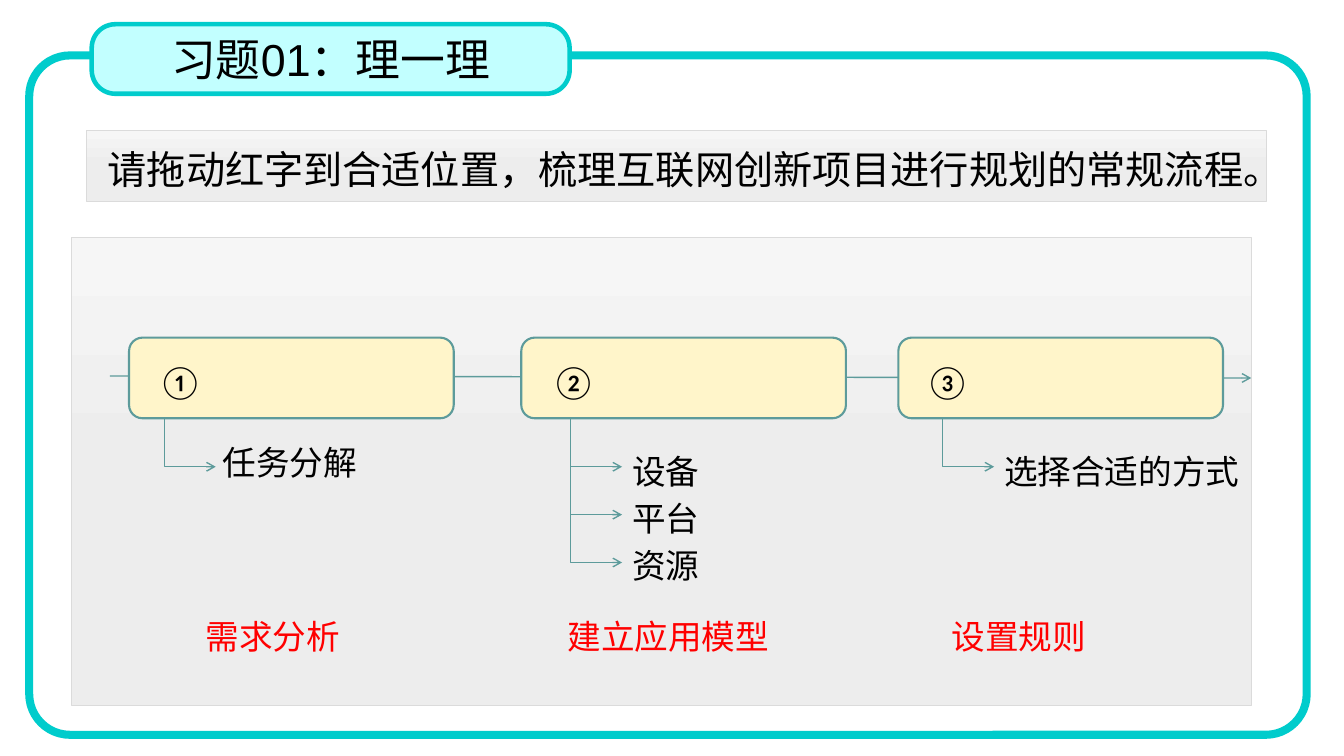
import copy
from dataclasses import dataclass

import lxml.etree
import pptx
import pptx.dml.color
import pptx.enum.shapes
import pptx.enum.text
import pptx.oxml.ns
import pptx.util

Inches = pptx.util.Inches
Shapes = pptx.enum.shapes.MSO_SHAPE
Connectors = pptx.enum.shapes.MSO_CONNECTOR
qn = pptx.oxml.ns.qn


@dataclass(frozen=True)
class Theme:
    """Colours, fonts and type sizes of the slide."""
    frame: str = "00CCCC"
    title_fill: str = "C2FFFF"
    step_fill: str = "FFF5CA"
    flow: str = "5D9B9B"
    panel_line: str = "DBDBDB"
    panel_stops: tuple = ("F6F6F6", "EDEDED", "EBEBEB")
    text: str = "000000"
    answer: str = "FF0000"
    title_font: str = "Arial"
    body_font: str = "Noto Sans CJK SC"
    answer_font: str = "Calibri"
    title_size: int = 32
    prompt_size: int = 28
    label_size: int = 24


THEME = Theme()


def rgb(value):
    """Return a colour from its hex digits."""
    return pptx.dml.color.RGBColor.from_string(value)


def style_paragraph(paragraph, font_name, size, color):
    """Set the font of a whole paragraph."""
    paragraph.font.name = font_name
    paragraph.font.size = pptx.util.Pt(size)
    paragraph.font.color.rgb = rgb(color)


def add_box(slide, kind, box, line_color, line_width, fill_color=None):
    """Add an outlined preset shape, filled if a colour is given."""
    shape = slide.shapes.add_shape(kind, *map(Inches, box))
    shape.shadow.inherit = False
    shape.line.color.rgb = rgb(line_color)
    shape.line.width = pptx.util.Pt(line_width)
    if fill_color:
        shape.fill.solid()
        shape.fill.fore_color.rgb = rgb(fill_color)
    else:
        shape.fill.background()
    return shape


def add_panel(slide, box):
    """Add a grey panel with a top-down gradient."""
    panel = add_box(slide, Shapes.RECTANGLE, box, THEME.panel_line, 0.5)
    panel.fill.gradient()
    panel.fill.gradient_angle = 270
    stop_list = panel._element.spPr.find(".//" + qn("a:gsLst"))
    stop_list.append(copy.deepcopy(stop_list[-1]))
    stops = panel.fill.gradient_stops
    for stop, color, position in zip(stops, THEME.panel_stops, (0, 0.5, 1)):
        stop.color.rgb = rgb(color)
        stop.position = position


def add_label(slide, text, box, font_name, color=THEME.text, size=THEME.label_size):
    """Add a wrapped text box with one widely spaced line."""
    label = slide.shapes.add_textbox(*map(Inches, box))
    frame = label.text_frame
    frame.word_wrap = True
    frame.auto_size = pptx.enum.text.MSO_AUTO_SIZE.SHAPE_TO_FIT_TEXT
    paragraph = frame.paragraphs[0]
    paragraph.text = text
    paragraph.line_spacing = 1.5
    style_paragraph(paragraph, font_name, size, color)


def add_arrow(slide, kind, start, end):
    """Add a thin connector with an open arrowhead at its end."""
    arrow = slide.shapes.add_connector(kind, *map(Inches, start + end))
    arrow.line.color.rgb = rgb(THEME.flow)
    arrow.line.width = pptx.util.Pt(1)
    properties = arrow._element.spPr
    line = properties.find(qn("a:ln"))
    lxml.etree.SubElement(line, qn("a:tailEnd"), type="arrow")
    lxml.etree.SubElement(properties, qn("a:effectLst"))
    return arrow


def add_branch(slide, left, top):
    """Add an arrow that runs down and then turns right."""
    width, height = 0.49, 0.51
    branch = add_arrow(slide, Connectors.ELBOW, (left, top + height), (left + width, top))
    properties = branch._element.spPr
    properties.find(qn("a:xfrm")).set("rot", "5400000")
    properties.find(qn("a:prstGeom")).set("prst", "bentConnector2")


def add_title(slide, text):
    """Add the outer frame and the title tab on its top edge."""
    frame = add_box(slide, Shapes.ROUNDED_RECTANGLE, (0.29, 0.55, 12.67, 6.74),
                    THEME.frame, 5.75)
    frame.adjustments[0] = 0.06
    tab = add_box(slide, Shapes.ROUNDED_RECTANGLE, (0.91, 0.24, 4.74, 0.69),
                  THEME.frame, 3.25, THEME.title_fill)
    tab.adjustments[0] = 0.34
    tab.text_frame.vertical_anchor = pptx.enum.text.MSO_ANCHOR.MIDDLE
    paragraph = tab.text_frame.paragraphs[0]
    paragraph.text = text
    paragraph.alignment = pptx.enum.text.PP_ALIGN.CENTER
    style_paragraph(paragraph, THEME.title_font, THEME.title_size, THEME.text)


def add_step(slide, left, number, number_left, branch_left, details):
    """Add one step box with its number, branches and details."""
    add_box(slide, Shapes.FLOWCHART_ALTERNATE_PROCESS, (left, 3.35, 3.22, 0.8),
            THEME.flow, 1.5, THEME.step_fill)
    add_label(slide, number, (number_left, 3.33, 2.11, 0.71), THEME.answer_font)
    for index, (text, text_left, text_top, width) in enumerate(details):
        add_branch(slide, branch_left, 4.13 + 0.475 * index)
        add_label(slide, text, (text_left, text_top, width, 0.71), THEME.body_font)


def main():
    """Build the slide and save it."""
    presentation = pptx.Presentation()
    presentation.slide_width = Inches(13.33)
    presentation.slide_height = Inches(7.5)
    slide = presentation.slides.add_slide(presentation.slide_layouts[6])

    add_panel(slide, (0.71, 2.36, 11.7, 4.64))
    add_arrow(slide, Connectors.STRAIGHT, (1.09, 3.73), (12.41, 3.75))
    add_panel(slide, (0.86, 1.29, 11.7, 0.71))
    add_title(slide, "习题01：理一理")
    add_label(slide, "请拖动红字到合适位置，梳理互联网创新项目进行规划的常规流程。",
              (0.97, 1.16, 11.59, 0.81), THEME.body_font, size=THEME.prompt_size)

    resources = [(text, 6.17, 4.22 + 0.47 * index, 2.11)
                 for index, text in enumerate(("设备", "平台", "资源"))]
    add_step(slide, 1.28, "①", 1.47, 1.64, [("任务分解", 2.11, 4.13, 2.11)])
    add_step(slide, 5.17, "②", 5.37, 5.67, resources)
    add_step(slide, 8.91, "③", 9.08, 9.36, [("选择合适的方式", 9.86, 4.22, 3.22)])

    answers = (("需求分析", 1.94, 2.55), ("建立应用模型", 5.53, 2.77), ("设置规则", 9.34, 2.02))
    for text, left, width in answers:
        add_label(slide, text, (left, 5.86, width, 0.71), THEME.answer_font, THEME.answer)

    presentation.save("out.pptx")


if __name__ == "__main__":
    main()
